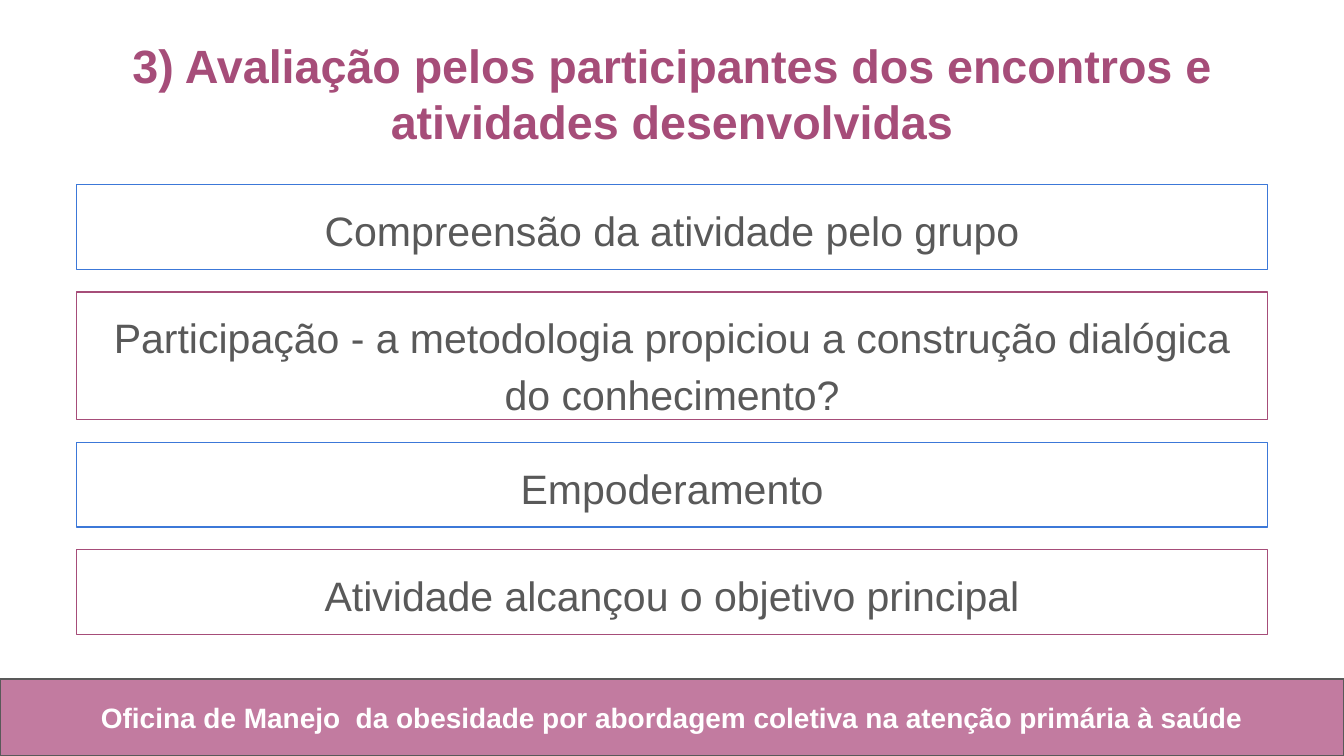
import pptx
import pptx.util
import pptx.dml.color
import pptx.enum.shapes
import pptx.enum.text

Pt = pptx.util.Pt
RECT = pptx.enum.shapes.MSO_SHAPE.RECTANGLE
ANCHOR = pptx.enum.text.MSO_ANCHOR
CENTER = pptx.enum.text.PP_ALIGN.CENTER

ROSE, PINK, BLUE, GREY, WHITE = "A64D79", "C27BA0", "3C78D8", "595959", "FFFFFF"
INSET = Pt(7.2)
GAP = 12.1
ITEMS = [
    ("Compreensão da atividade pelo grupo", 45.4),
    ("Participação - a metodologia propiciou a construção dialógica do conhecimento?", 68.4),
    ("Empoderamento", 45.4),
    ("Atividade alcançou o objetivo principal", 45.4),
]


def color(hue):
    return pptx.dml.color.RGBColor.from_string(hue)


def apply(target, values):
    for name, value in values.items():
        setattr(target, name, value)


def write(shape, text, size, hue, bold=False, anchor=ANCHOR.TOP, space=1.0):
    frame = shape.text_frame
    apply(frame, dict(word_wrap=True, vertical_anchor=anchor,
                      margin_left=INSET, margin_right=INSET,
                      margin_top=INSET, margin_bottom=INSET))
    line = frame.paragraphs[0]
    apply(line, dict(alignment=CENTER, line_spacing=space))
    run = line.add_run()
    run.text = text
    apply(run.font, dict(name="Arial", size=Pt(size), bold=bold))
    run.font.color.rgb = color(hue)


def add_box(slide, box, edge, fill=None):
    shape = slide.shapes.add_shape(RECT, *map(Pt, box))
    shape.shadow.inherit = False
    if fill:
        shape.fill.solid()
        shape.fill.fore_color.rgb = color(fill)
    else:
        shape.fill.background()
    shape.line.color.rgb = color(edge)
    shape.line.width = Pt(0.75)
    return shape


def add_footer(slide, box):
    left, top, width, height = box
    add_box(slide, box, GREY, PINK)
    label = slide.shapes.add_textbox(
        Pt(left + 24.3), Pt(top + 4.3), Pt(width - 48.6), Pt(height - 8.6))
    write(label, "Oficina de Manejo  da obesidade por abordagem coletiva na atenção primária à saúde",
          15, WHITE, True)


def add_title(slide, box):
    title = slide.shapes.add_textbox(*map(Pt, box))
    write(title, "3) Avaliação pelos participantes dos encontros e atividades desenvolvidas",
          25, ROSE, True)


def add_items(slide, box):
    """Stack the items from the top of the box, with edges in turn blue and rose."""
    left, top, width, _ = box
    for i, (text, height) in enumerate(ITEMS):
        shape = add_box(slide, (left, top, width, height), (BLUE, ROSE)[i % 2])
        write(shape, text, 22, GREY, space=1.15)
        top += height + GAP


def main():
    deck = pptx.Presentation()
    apply(deck, dict(slide_width=Pt(720), slide_height=Pt(405)))
    slide = deck.slides.add_slide(deck.slide_layouts[6])
    add_footer(slide, (0, 363.8, 720, 41.2))
    add_title(slide, (21, 12.3, 677.8, 68.4))
    add_items(slide, (41, 99, 638.2, 241))
    deck.save("out.pptx")


if __name__ == "__main__":
    main()
